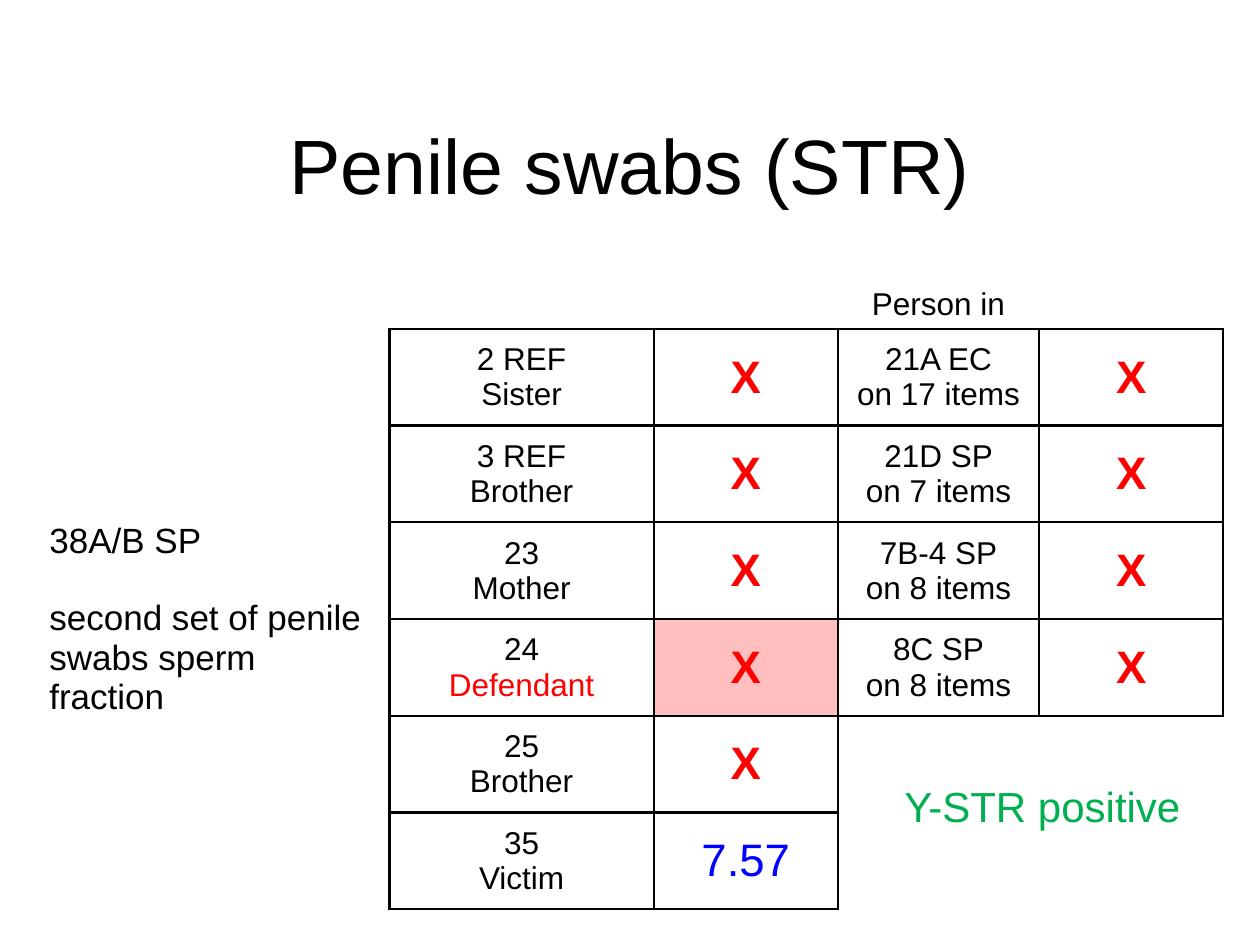
import pptx
import pptx.util
import pptx.dml.color
import pptx.enum.text
import pptx.oxml.ns
import lxml.etree

Cm = pptx.util.Cm
Pt = pptx.util.Pt
ALIGN = pptx.enum.text.PP_ALIGN
ANCHOR = pptx.enum.text.MSO_ANCHOR
qn = pptx.oxml.ns.qn

COLORS = {"black": "000000", "red": "FF0000", "blue": "0000FF", "green": "00B050"}

COLUMN_WIDTHS = [7.11, 5.33, 3.71, 4.06, 3.71]
ROW_HEIGHTS = [1.22] + [1.95] * 6

PERSONS = [
    ("2 REF", "Sister", "X"),
    ("3 REF", "Brother", "X"),
    ("23", "Mother", "X"),
    ("24", "Defendant", "X"),
    ("25", "Brother", "X"),
    ("35", "Victim", "7.57"),
]
ITEMS = [
    ("21A EC", "on 17 items", "X"),
    ("21D SP", "on 7 items", "X"),
    ("7B-4 SP", "on 8 items", "X"),
    ("8C SP", "on 8 items", "X"),
]


def write(frame, lines, size, color="black", align=ALIGN.CENTER, bold=False):
    frame.text = "\n".join(lines)
    for paragraph in frame.paragraphs:
        paragraph.alignment = align
        paragraph.font.name = "Arial"
        paragraph.font.size = Pt(size)
        paragraph.font.bold = bold
        paragraph.font.color.rgb = pptx.dml.color.RGBColor.from_string(COLORS[color])


def set_border(cell, side, visible):
    line = lxml.etree.SubElement(cell._tc.get_or_add_tcPr(), qn("a:ln" + side), w=str(Pt(1.5)))
    if visible:
        fill = lxml.etree.SubElement(line, qn("a:solidFill"))
        lxml.etree.SubElement(fill, qn("a:srgbClr"), val=COLORS["black"])
    else:
        lxml.etree.SubElement(line, qn("a:noFill"))


deck = pptx.Presentation()
deck.slide_width = Cm(25.4)
deck.slide_height = Cm(19.05)
slide = deck.slides.add_slide(deck.slide_layouts[5])

title = slide.shapes.title
title.left, title.top, title.width, title.height = Cm(0), Cm(1.7), Cm(25.4), Cm(3.18)
title.text_frame.vertical_anchor = ANCHOR.MIDDLE
write(title.text_frame, ["Penile swabs (STR)"], 44)

matches = slide.shapes.add_table(
    len(ROW_HEIGHTS), len(COLUMN_WIDTHS), Cm(0.74), Cm(5.41),
    Cm(sum(COLUMN_WIDTHS)), Cm(sum(ROW_HEIGHTS)),
).table
matches.first_row = False
matches.horz_banding = False
for column, width in zip(matches.columns, COLUMN_WIDTHS):
    column.width = Cm(width)
for row, height in zip(matches.rows, ROW_HEIGHTS):
    row.height = Cm(height)

boxed = set()
for first_column, records in ((1, PERSONS), (3, ITEMS)):
    for row, (sample, description, result) in enumerate(records, start=1):
        boxed |= {(row, first_column), (row, first_column + 1)}
        write(matches.cell(row, first_column).text_frame, [sample, description], 18)
        excluded = result == "X"
        write(matches.cell(row, first_column + 1).text_frame, [result], 26,
              "red" if excluded else "blue", bold=excluded)

for row in range(len(ROW_HEIGHTS)):
    for column in range(len(COLUMN_WIDTHS)):
        cell = matches.cell(row, column)
        cell.vertical_anchor = ANCHOR.MIDDLE
        for side, across, down in (("L", -1, 0), ("R", 1, 0), ("T", 0, -1), ("B", 0, 1)):
            neighbours = {(row, column), (row + down, column + across)}
            set_border(cell, side, bool(boxed & neighbours))
        cell.fill.background()

header = matches.cell(0, 3)
header.vertical_anchor = ANCHOR.BOTTOM
write(header.text_frame, ["Person in"], 18)

evidence = matches.cell(1, 0)
evidence.merge(matches.cell(6, 0))
write(evidence.text_frame, ["38A/B SP", "second set of penile swabs sperm fraction"], 20,
      align=ALIGN.LEFT)
evidence.text_frame.paragraphs[1].space_before = Pt(22)

red = pptx.dml.color.RGBColor.from_string(COLORS["red"])
matches.cell(4, 1).text_frame.paragraphs[1].font.color.rgb = red
defendant_result = matches.cell(4, 2)
defendant_result.fill.solid()
defendant_result.fill.fore_color.rgb = red
tint = defendant_result._tc.tcPr.find(qn("a:solidFill")).find(qn("a:srgbClr"))
lxml.etree.SubElement(tint, qn("a:alpha"), val="25000")

conclusion = slide.shapes.add_textbox(Cm(17.98), Cm(15.6), Cm(6.15), Cm(1.27)).text_frame
conclusion.word_wrap = False
conclusion.auto_size = pptx.enum.text.MSO_AUTO_SIZE.SHAPE_TO_FIT_TEXT
write(conclusion, ["Y-STR positive"], 24, "green", ALIGN.LEFT)

for paragraph in matches.cell(4, 1).text_frame.paragraphs[1:]:
    for run in paragraph.runs:
        run.font.color.rgb = red

deck.save("out.pptx")
